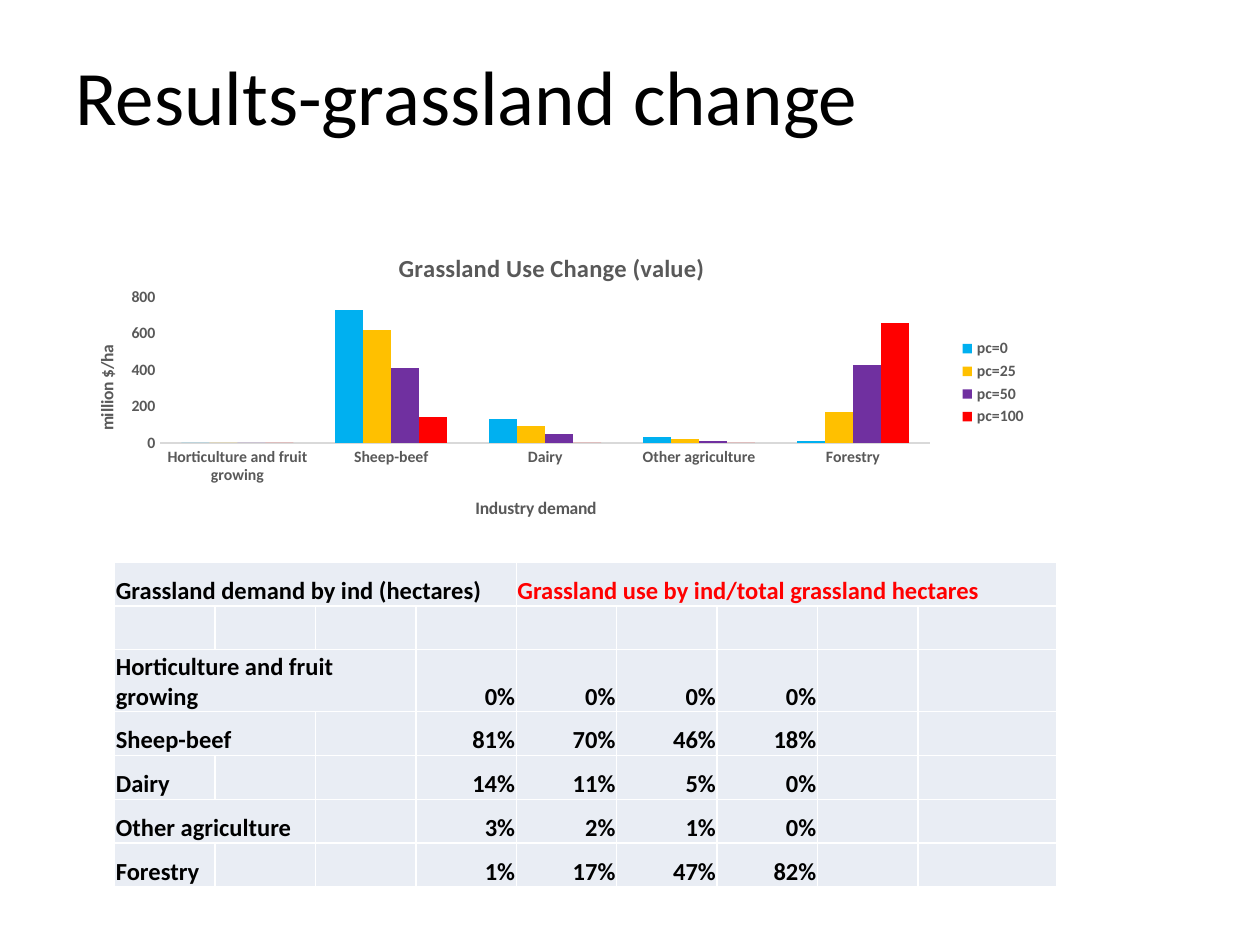
from lxml.etree import SubElement
from pptx import Presentation
from pptx.chart.data import CategoryChartData
from pptx.dml.color import RGBColor
from pptx.enum.chart import XL_CHART_TYPE as ChartType, XL_LEGEND_POSITION as LegendPosition
from pptx.enum.chart import XL_TICK_MARK as TickMark
from pptx.enum.text import MSO_ANCHOR as Anchor, PP_ALIGN as Align
from pptx.oxml import parse_xml
from pptx.oxml.ns import nsdecls, qn
from pptx.util import Pt

FONT = "Calibri"
COLORS = {
    "text": "000000", "chart text": "595959", "axis": "D9D9D9",
    "cell": "E9EDF4", "border": "FFFFFF", "highlight": "FF0000",
    "pc=0": "00B0F0", "pc=25": "FFC000", "pc=50": "7030A0", "pc=100": "FF0000",
}
TITLE = "Results-grassland change"
CHART_TITLE = "Grassland Use Change (value)"
CATEGORY_TITLE = "Industry demand"
VALUE_TITLE = "million $/ha"
INDUSTRIES = ["Horticulture and fruit growing", "Sheep-beef", "Dairy",
              "Other agriculture", "Forestry"]
USE_VALUES = {
    "pc=0": [0, 730, 130, 30, 10],
    "pc=25": [0, 620, 90, 20, 170],
    "pc=50": [0, 410, 50, 10, 430],
    "pc=100": [0, 140, 0, 0, 660],
}
# Text, first column, columns spanned, colour
HEADINGS = [
    ("Grassland demand by ind (hectares)", 0, 4, "text"),
    ("Grassland use by ind/total grassland hectares", 4, 5, "highlight"),
]
NAME_SPANS = [3, 2, 1, 2, 1]
SHARES = [
    ["0%", "0%", "0%", "0%"],
    ["81%", "70%", "46%", "18%"],
    ["14%", "11%", "5%", "0%"],
    ["3%", "2%", "1%", "0%"],
    ["1%", "17%", "47%", "82%"],
]
FIRST_SHARE_ROW, FIRST_SHARE_COLUMN = 2, 3
COLUMN_WIDTHS = [57.4] * 8 + [79.2]
ROW_HEIGHTS = [25.1, 25.1, 35.3] + [25.1] * 4


def color(name):
    return RGBColor.from_string(COLORS[name])


def style_font(font, size, color_name, bold=True):
    font.name, font.size, font.bold = FONT, Pt(size), bold
    font.color.rgb = color(color_name)


def add_run(paragraph, text, size, color_name="text", bold=True):
    run = paragraph.add_run()
    run.text = text
    style_font(run.font, size, color_name, bold)


def place(element, index, **fractions):
    """Give a chart part a manual layout, in fractions of the chart."""
    for old_layout in element.findall(qn("c:layout")):
        element.remove(old_layout)
    layout = parse_xml(f"<c:layout {nsdecls('c')}/>")
    manual = SubElement(layout, qn("c:manualLayout"))
    if element.tag == qn("c:plotArea"):
        SubElement(manual, qn("c:layoutTarget"), val="inner")
    for mode in ("xMode", "yMode"):
        SubElement(manual, qn(f"c:{mode}"), val="edge")
    for name, value in fractions.items():
        SubElement(manual, qn(f"c:{name}"), val=str(value))
    element.insert(index, layout)


def add_title(slide):
    box = slide.shapes.add_textbox(Pt(36), Pt(21.6), Pt(648), Pt(90))
    frame = box.text_frame
    frame.word_wrap = True
    frame.margin_top = Pt(6)
    add_run(frame.paragraphs[0], TITLE, 44, bold=False)


def add_use_chart(slide):
    data = CategoryChartData()
    data.categories = INDUSTRIES
    for name, values in USE_VALUES.items():
        data.add_series(name, values)
    chart = slide.shapes.add_chart(ChartType.COLUMN_CLUSTERED, Pt(36), Pt(128),
                                   Pt(556.6), Pt(181.4), data).chart
    style_font(chart.font, 10, "text", bold=False)

    plot = chart.plots[0]
    plot.gap_width, plot.overlap, plot.vary_by_categories = 150, 0, False
    for series in plot.series:
        series.format.fill.solid()
        series.format.fill.fore_color.rgb = color(series.name)
        series.invert_if_negative = False

    category_axis, value_axis = chart.category_axis, chart.value_axis
    for axis in (category_axis, value_axis):
        axis.major_tick_mark = axis.minor_tick_mark = TickMark.NONE
        axis.has_major_gridlines = False
        style_font(axis.tick_labels.font, 9, "chart text")
    category_axis.format.line.color.rgb = color("axis")
    category_axis.format.line.width = Pt(0.75)
    value_axis.format.line.fill.background()
    value_axis.minimum_scale, value_axis.maximum_scale = 0, 800
    value_axis.major_unit = 200

    for title, text, size, x, y in (
        (chart.chart_title, CHART_TITLE, 14, 0.34, 0.07),
        (category_axis.axis_title, CATEGORY_TITLE, 10, 0.42, 0.85),
        (value_axis.axis_title, VALUE_TITLE, 10, 0.03, 0.37),
    ):
        add_run(title.text_frame.paragraphs[0], text, size, "chart text")
        place(title.text_frame._element.getparent().getparent(), 1, x=x, y=y)

    chart.has_legend = True
    chart.legend.position = LegendPosition.RIGHT
    chart.legend.include_in_layout = False
    style_font(chart.legend.font, 9, "chart text")
    place(chart.element.find(f".//{qn('c:legend')}"), 1, x=0.91, y=0.35, w=0.09, h=0.3)
    place(chart.element.find(f".//{qn('c:plotArea')}"), 0, x=0.1, y=0.23, w=0.79, h=0.46)


def style_cell(cell):
    cell.margin_left = cell.margin_top = cell.margin_right = Pt(0.7)
    cell.margin_bottom = 0
    cell.vertical_anchor = Anchor.BOTTOM
    properties = cell._tc.get_or_add_tcPr()
    for side in "LRTB":
        line = SubElement(properties, qn(f"a:ln{side}"), w=str(Pt(1)))
        SubElement(SubElement(line, qn("a:solidFill")), qn("a:srgbClr"), val=COLORS["border"])
    cell.fill.solid()
    cell.fill.fore_color.rgb = color("cell")


def add_share_table(slide):
    table = slide.shapes.add_table(len(ROW_HEIGHTS), len(COLUMN_WIDTHS), Pt(65.5), Pt(321.1),
                                   Pt(sum(COLUMN_WIDTHS)), Pt(sum(ROW_HEIGHTS))).table
    table.first_row = table.horz_banding = False
    for column, width in zip(table.columns, COLUMN_WIDTHS):
        column.width = Pt(width)
    for row, height in zip(table.rows, ROW_HEIGHTS):
        row.height = Pt(height)
    for cell in table.iter_cells():
        style_cell(cell)

    def fill_cell(row, column, text, span=1, color_name="text", align=Align.LEFT):
        cell = table.cell(row, column)
        if span > 1:
            cell.merge(table.cell(row, column + span - 1))
        paragraph = cell.text_frame.paragraphs[0]
        paragraph.alignment = align
        add_run(paragraph, text, 14, color_name)

    for text, column, span, color_name in HEADINGS:
        fill_cell(0, column, text, span, color_name)
    rows = zip(INDUSTRIES, NAME_SPANS, SHARES)
    for row, (industry, span, shares) in enumerate(rows, FIRST_SHARE_ROW):
        fill_cell(row, 0, industry, span)
        for column, share in enumerate(shares, FIRST_SHARE_COLUMN):
            fill_cell(row, column, share, align=Align.RIGHT)


def main():
    presentation = Presentation()
    presentation.slide_width, presentation.slide_height = Pt(720), Pt(540)
    slide = presentation.slides.add_slide(presentation.slide_layouts[6])
    add_title(slide)
    add_use_chart(slide)
    add_share_table(slide)
    presentation.save("out.pptx")


if __name__ == "__main__":
    main()
